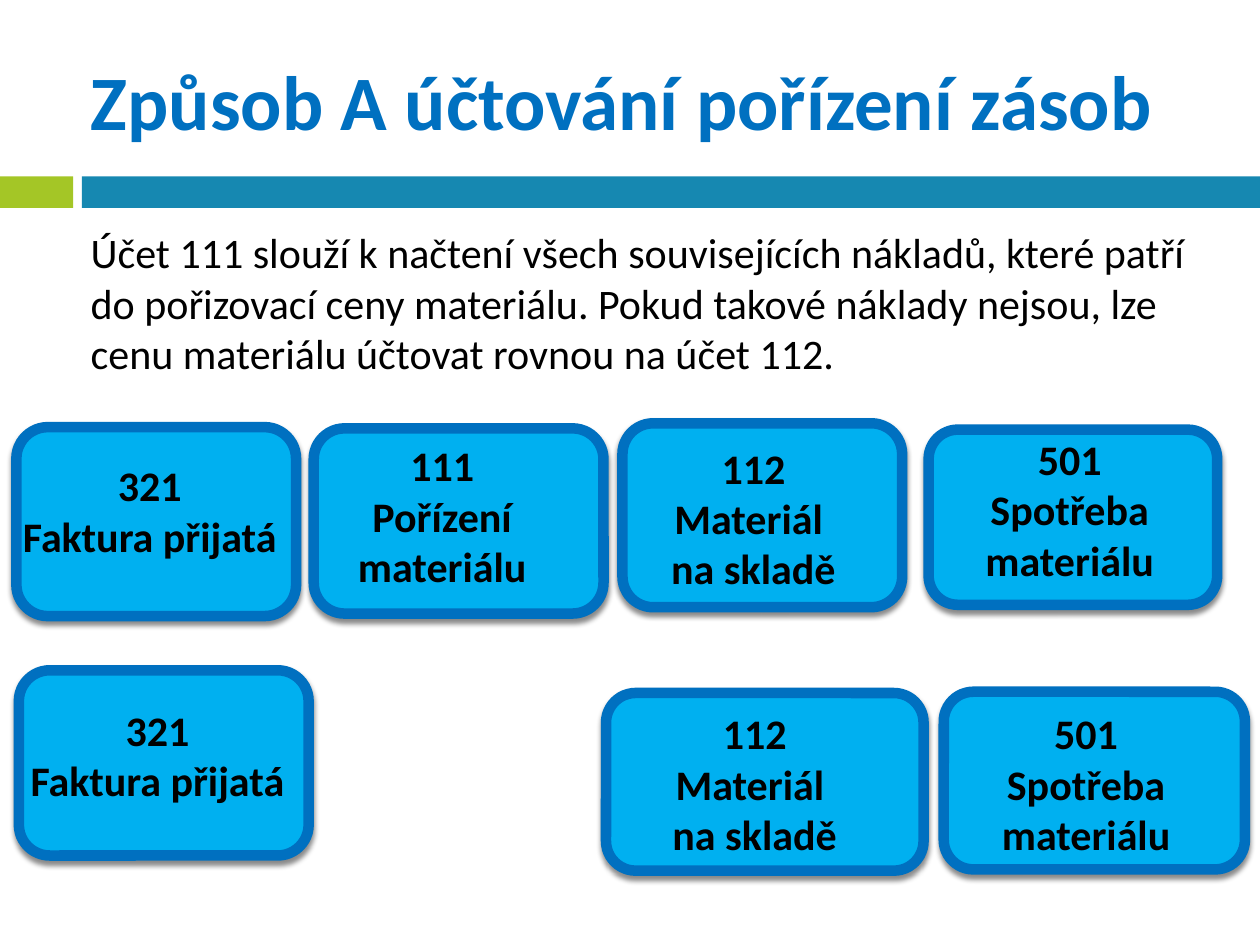
from lxml import etree
from pptx import Presentation
from pptx.dml.color import RGBColor
from pptx.enum import shapes, text
from pptx.oxml import ns
from pptx.util import Inches, Pt

GREEN = RGBColor(0xA4, 0xC6, 0x26)
TEAL = RGBColor(0x16, 0x88, 0xB1)
BLUE = RGBColor(0x00, 0x70, 0xC0)
SKY = RGBColor(0x00, 0xB0, 0xF0)
BLACK = RGBColor(0, 0, 0)

TITLE = "Způsob A účtování pořízení zásob"
EXPLANATION = (
    "Účet 111 slouží k načtení všech souvisejících nákladů, které patří "
    "do pořizovací ceny materiálu. Pokud takové náklady nejsou, lze cenu "
    "materiálu účtovat rovnou na účet 112."
)
INVOICE = ["321", "Faktura přijatá"]
PURCHASE = ["111", "Pořízení materiálu"]
STOCK = ["112", "Materiál ", "na skladě"]
CONSUMPTION = ["501", "Spotřeba", "materiálu"]

BANDS = [(0, 0.58, GREEN), (0.65, 9.35, TEAL)]
ACCOUNTS = [
    (INVOICE, (0.13, 3.39, 2.22, 1.5), (0.01, 3.6)),
    (PURCHASE, (2.49, 3.4, 2.3, 1.47), (2.33, 3.44)),
    (STOCK, (4.94, 3.36, 2.22, 1.46), (4.8, 3.46)),
    (CONSUMPTION, (7.37, 3.41, 2.29, 1.39), (7.31, 3.39)),
    (INVOICE, (0.15, 5.32, 2.3, 1.47), (0.07, 5.54)),
    (STOCK, (4.81, 5.5, 2.52, 1.41), (4.81, 5.57)),
    (CONSUMPTION, (7.49, 5.49, 2.39, 1.41), (7.44, 5.57)),
]
LABEL_WIDTH = 2.36
LINE_HEIGHT = 0.4
INSET = 0.05


def add_block(slide, kind, box, fill):
    block = slide.shapes.add_shape(kind, *map(Inches, box))
    block.shadow.inherit = False
    block.fill.solid()
    block.fill.fore_color.rgb = fill
    block.line.fill.background()
    return block


def add_shadow(block):
    effects = block._element.spPr.find(ns.qn("a:effectLst"))
    shadow = etree.SubElement(
        effects, ns.qn("a:outerShdw"), blurRad=str(Pt(3)), dist=str(Pt(2.4)),
        dir="5400000", rotWithShape="0")
    color = etree.SubElement(shadow, ns.qn("a:srgbClr"), val="000000")
    etree.SubElement(color, ns.qn("a:alpha"), val="45000")


def add_text(slide, lines, box, size=24, color=BLACK, bold=False, before=0,
             align=text.PP_ALIGN.LEFT, anchor=text.MSO_ANCHOR.TOP):
    frame = slide.shapes.add_textbox(*map(Inches, box)).text_frame
    frame.word_wrap = True
    frame.vertical_anchor = anchor
    frame.margin_left = frame.margin_right = Inches(INSET)
    frame.margin_top = frame.margin_bottom = Inches(INSET)
    for index, line in enumerate(lines):
        paragraph = frame.add_paragraph() if index else frame.paragraphs[0]
        paragraph.alignment = align
        paragraph.space_before = Pt(before)
        run = paragraph.add_run()
        run.text = line
        run.font.name = "Calibri"
        run.font.size = Pt(size)
        run.font.bold = bold
        run.font.color.rgb = color


def main():
    deck = Presentation()
    deck.slide_width, deck.slide_height = Inches(10), Inches(7.5)
    slide = deck.slides.add_slide(deck.slide_layouts[6])

    for left, width, fill in BANDS:
        add_block(slide, shapes.MSO_SHAPE.RECTANGLE, (left, 1.4, width, 0.25), fill)
    add_text(slide, [TITLE], (0.67, 0.25, 8.92, 1.08), size=44, color=BLUE,
             bold=True, anchor=text.MSO_ANCHOR.MIDDLE)
    add_text(slide, [EXPLANATION], (0.67, 1.75, 9.13, 4.92), before=7)

    for _, card_box, _ in ACCOUNTS:
        card = add_block(slide, shapes.MSO_SHAPE.ROUNDED_RECTANGLE, card_box, SKY)
        card.line.color.rgb = BLUE
        card.line.width = Pt(6)
        add_shadow(card)
    for lines, _, (left, top) in ACCOUNTS:
        height = LINE_HEIGHT * len(lines) + 2 * INSET
        add_text(slide, lines, (left, top, LABEL_WIDTH, height), bold=True,
                 align=text.PP_ALIGN.CENTER)

    deck.save("out.pptx")


if __name__ == "__main__":
    main()
